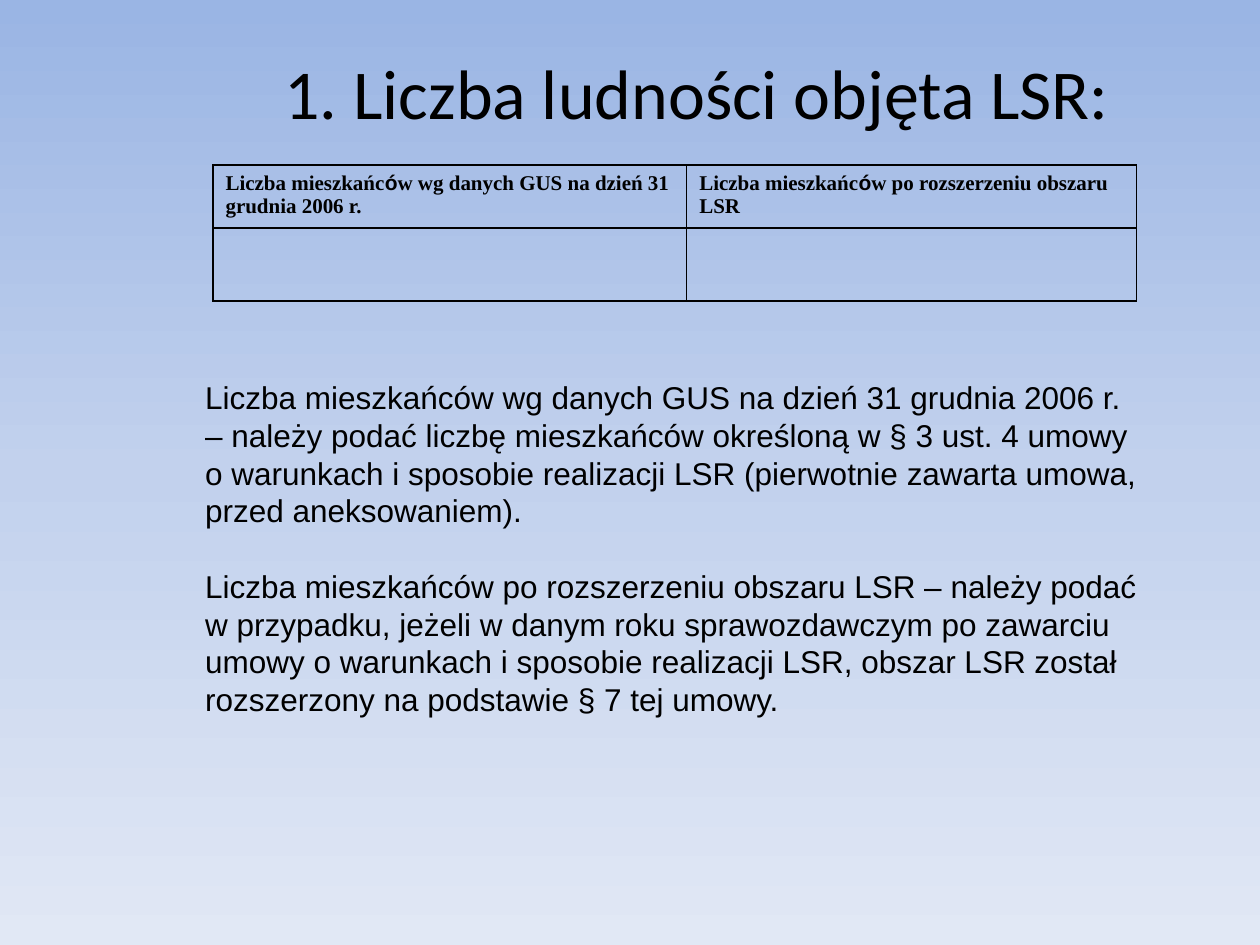
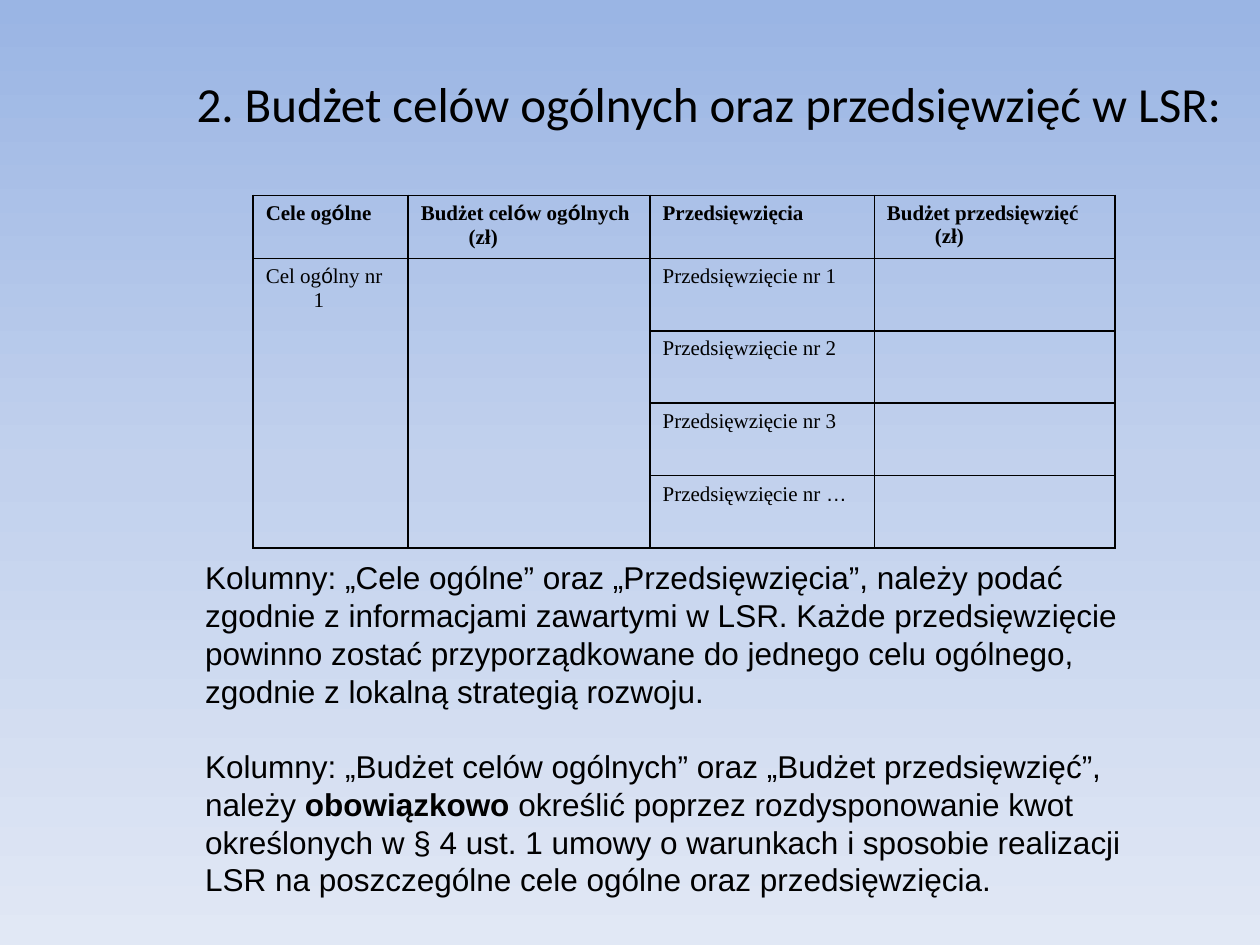
import itertools
from dataclasses import dataclass

import pptx
import pptx.dml.color
import pptx.enum.text
import pptx.oxml
import pptx.oxml.ns
import pptx.util
from pptx.util import Inches

qn = pptx.oxml.ns.qn


@dataclass(frozen=True)
class Theme:
    ink: str = "000000"
    sky: tuple = ((0, "9AB5E4"), (50, "C2D1ED"), (100, "E1E8F5"))
    head: str = "Calibri"
    body: str = "Arial"
    cell: str = "Times New Roman"
    text: int = 18
    small: int = 12
    gap: float = 21.5
    rule: float = 1


@dataclass(frozen=True)
class Box:
    left: float
    top: float
    width: float
    height: float

    def place(self) -> tuple:
        return tuple(Inches(n) for n in (self.left, self.top, self.width, self.height))


@dataclass(frozen=True)
class Run:
    text: str
    bold: bool = False


@dataclass(frozen=True)
class Title:
    box: Box
    text: str
    size: int


@dataclass(frozen=True)
class Grid:
    box: Box
    cols: tuple
    rows: tuple
    indent: float = 0
    merged: tuple = ()  # columns joined below the header


@dataclass(frozen=True)
class Note:
    box: Box
    paras: tuple


@dataclass(frozen=True)
class Page:
    title: Title
    grid: Grid
    note: Note


THEME = Theme()
HEAD = 0.47  # header row height

PAGES = (
    Page(
        Title(Box(1.56, 0.3, 7.94, 0.85), "1. Liczba ludności objęta LSR:", 40),
        Grid(
            Box(1.69, 1.31, 7.32, 1.05), (3.76, 3.57),
            (("Liczba mieszkańców wg danych GUS na dzień 31 grudnia 2006 r.",
              "Liczba mieszkańców po rozszerzeniu obszaru LSR"),
             ("", "")),
        ),
        Note(Box(1.53, 2.95, 7.64, 2.8), (
            (Run("Liczba mieszkańców wg danych GUS na dzień 31 grudnia 2006 r. "
                 "– należy podać liczbę mieszkańców określoną w § 3 ust. 4 umowy "
                 "o warunkach i sposobie realizacji LSR (pierwotnie zawarta umowa, "
                 "przed aneksowaniem)."),),
            (Run("Liczba mieszkańców po rozszerzeniu obszaru LSR – należy podać "
                 "w przypadku, jeżeli w danym roku sprawozdawczym po zawarciu "
                 "umowy o warunkach i sposobie realizacji LSR, obszar LSR został "
                 "rozszerzony na podstawie § 7 tej umowy."),),
        )),
    ),
    Page(
        Title(Box(1.33, 0.08, 8.59, 1.47),
              "2. Budżet celów ogólnych oraz przedsięwzięć w LSR:", 28),
        Grid(
            Box(2.01, 1.55, 6.85, 2.77), (1.23, 1.92, 1.78, 1.91),
            (("Cele ogólne", "Budżet celów ogólnych (zł)",
              "Przedsięwzięcia", "Budżet przedsięwzięć (zł)"),
             ("Cel ogólny nr 1", "", "Przedsięwzięcie nr 1", ""),
             *(("", "", f"Przedsięwzięcie nr {n}", "") for n in (2, 3, "…"))),
            indent=0.38, merged=(0, 1),
        ),
        Note(Box(1.53, 4.38, 7.72, 2.8), (
            (Run("Kolumny: „Cele ogólne” oraz „Przedsięwzięcia”, należy podać "
                 "zgodnie z informacjami zawartymi w LSR. Każde przedsięwzięcie "
                 "powinno zostać przyporządkowane do jednego celu ogólnego, "
                 "zgodnie z lokalną strategią rozwoju."),),
            (Run("Kolumny: „Budżet celów ogólnych” oraz „Budżet przedsięwzięć”, należy "),
             Run("obowiązkowo", True),
             Run(" określić poprzez rozdysponowanie kwot określonych w § 4 ust. 1 "
                 "umowy o warunkach i sposobie realizacji LSR na poszczególne "
                 "cele ogólne oraz przedsięwzięcia.")),
        )),
    ),
)


def add_run(para, text: str, font: str, size: float, bold: bool = False) -> None:
    run = para.add_run()
    run.text = text
    run.font.name = font
    run.font.size = pptx.util.Pt(size)
    run.font.bold = bold
    run.font.color.rgb = pptx.dml.color.RGBColor.from_string(THEME.ink)


def add_frame(slide, box: Box):
    frame = slide.shapes.add_textbox(*box.place()).text_frame
    frame.word_wrap = True
    frame.vertical_anchor = pptx.enum.text.MSO_ANCHOR.MIDDLE
    return frame


def paint_back(master) -> None:
    fill = master.background.fill
    fill.gradient()
    fill.gradient_angle = 270
    stops = next(master.element.iter(qn("a:gsLst")))
    for stop in list(stops):
        stops.remove(stop)
    for spot, color in THEME.sky:
        stop = pptx.oxml.parse_xml(
            f'<a:gs {pptx.oxml.ns.nsdecls("a")} pos="{spot * 1000}">'
            f'<a:srgbClr val="{color}"/></a:gs>')
        stops.append(stop)


def add_title(slide, title: Title) -> None:
    para = add_frame(slide, title.box).paragraphs[0]
    para.alignment = pptx.enum.text.PP_ALIGN.CENTER
    add_run(para, title.text, THEME.head, title.size)


def add_note(slide, note: Note) -> None:
    frame = add_frame(slide, note.box)
    frame.auto_size = pptx.enum.text.MSO_AUTO_SIZE.SHAPE_TO_FIT_TEXT
    for i, runs in enumerate(note.paras):
        para = frame.add_paragraph() if i else frame.paragraphs[0]
        if i:
            para.space_before = pptx.util.Pt(THEME.gap)
        for run in runs:
            add_run(para, run.text, THEME.body, THEME.text, run.bold)


def style_cell(cell) -> None:
    props = cell._tc.get_or_add_tcPr()
    width = pptx.util.Pt(THEME.rule)
    for side in ("lnL", "lnR", "lnT", "lnB"):
        props.append(pptx.oxml.parse_xml(
            f'<a:{side} {pptx.oxml.ns.nsdecls("a")} w="{width}"><a:solidFill>'
            f'<a:srgbClr val="{THEME.ink}"/></a:solidFill></a:{side}>'))
    cell.fill.background()


def fill_cell(cell, text: str, bold: bool, indent: float) -> None:
    para = cell.text_frame.paragraphs[0]
    if indent:
        props = para._p.get_or_add_pPr()
        props.set("marL", str(Inches(indent)))
        props.set("indent", str(-Inches(indent)))
    # These two signs use the body font inside cells
    for odd, part in itertools.groupby(text, lambda sign: sign in "ó…"):
        font = THEME.body if odd else THEME.cell
        add_run(para, "".join(part), font, THEME.small, bold)


def add_grid(slide, grid: Grid) -> None:
    count = len(grid.rows)
    table = slide.shapes.add_table(count, len(grid.cols), *grid.box.place()).table
    table.first_row = table.horz_banding = False
    for col, width in zip(table.columns, grid.cols):
        col.width = Inches(width)
    step = (grid.box.height - HEAD) / (count - 1)
    for r, texts in enumerate(grid.rows):
        table.rows[r].height = Inches(step if r else HEAD)
        for c, text in enumerate(texts):
            cell = table.cell(r, c)
            style_cell(cell)
            if text:
                fill_cell(cell, text, r == 0, grid.indent)
    for c in grid.merged:
        table.cell(1, c).merge(table.cell(count - 1, c))


def main() -> None:
    deck = pptx.Presentation()
    deck.slide_width, deck.slide_height = Inches(10), Inches(7.5)
    paint_back(deck.slide_master)
    for page in PAGES:
        slide = deck.slides.add_slide(deck.slide_layouts[6])
        add_title(slide, page.title)
        add_grid(slide, page.grid)
        add_note(slide, page.note)
    deck.save("out.pptx")


if __name__ == "__main__":
    main()
